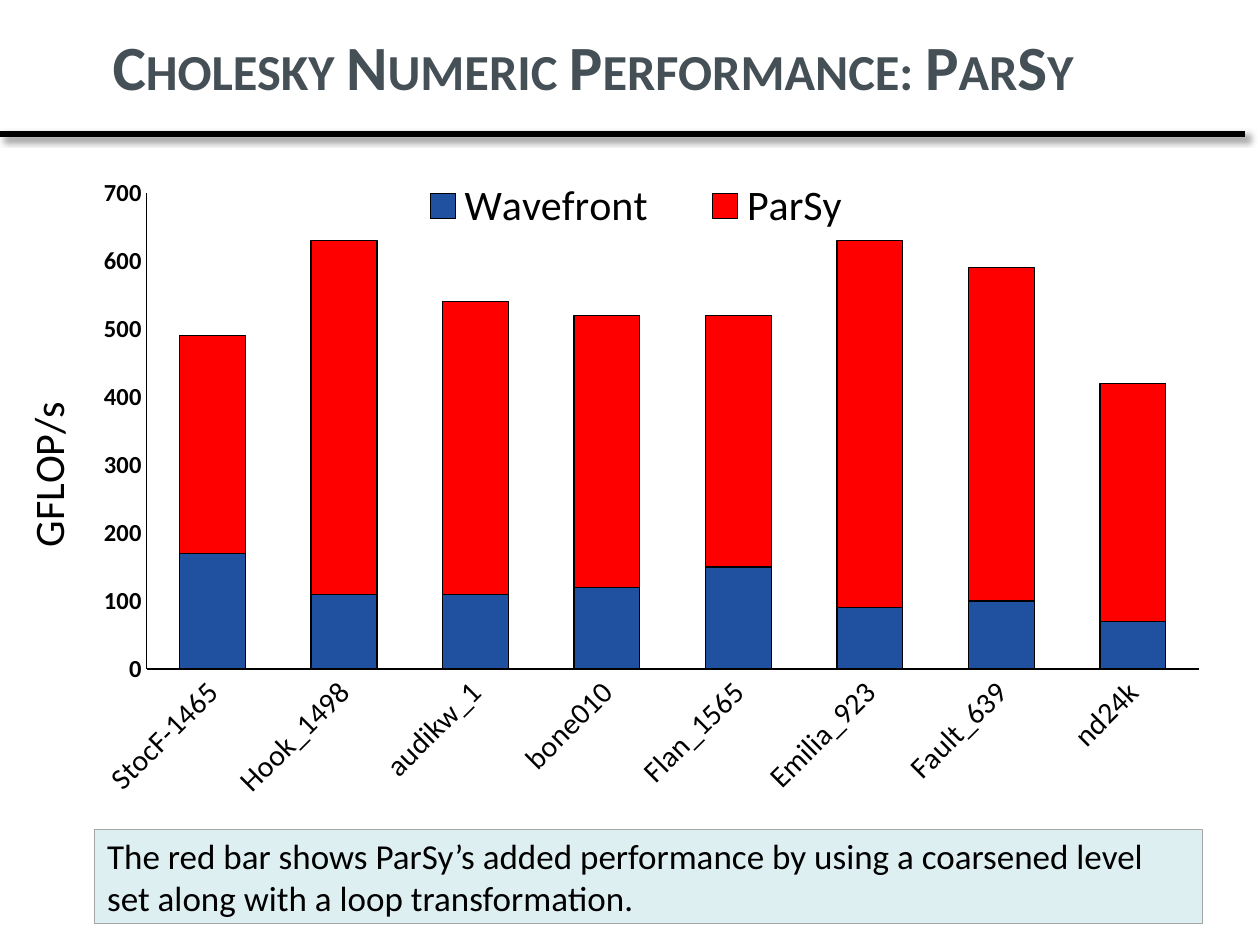
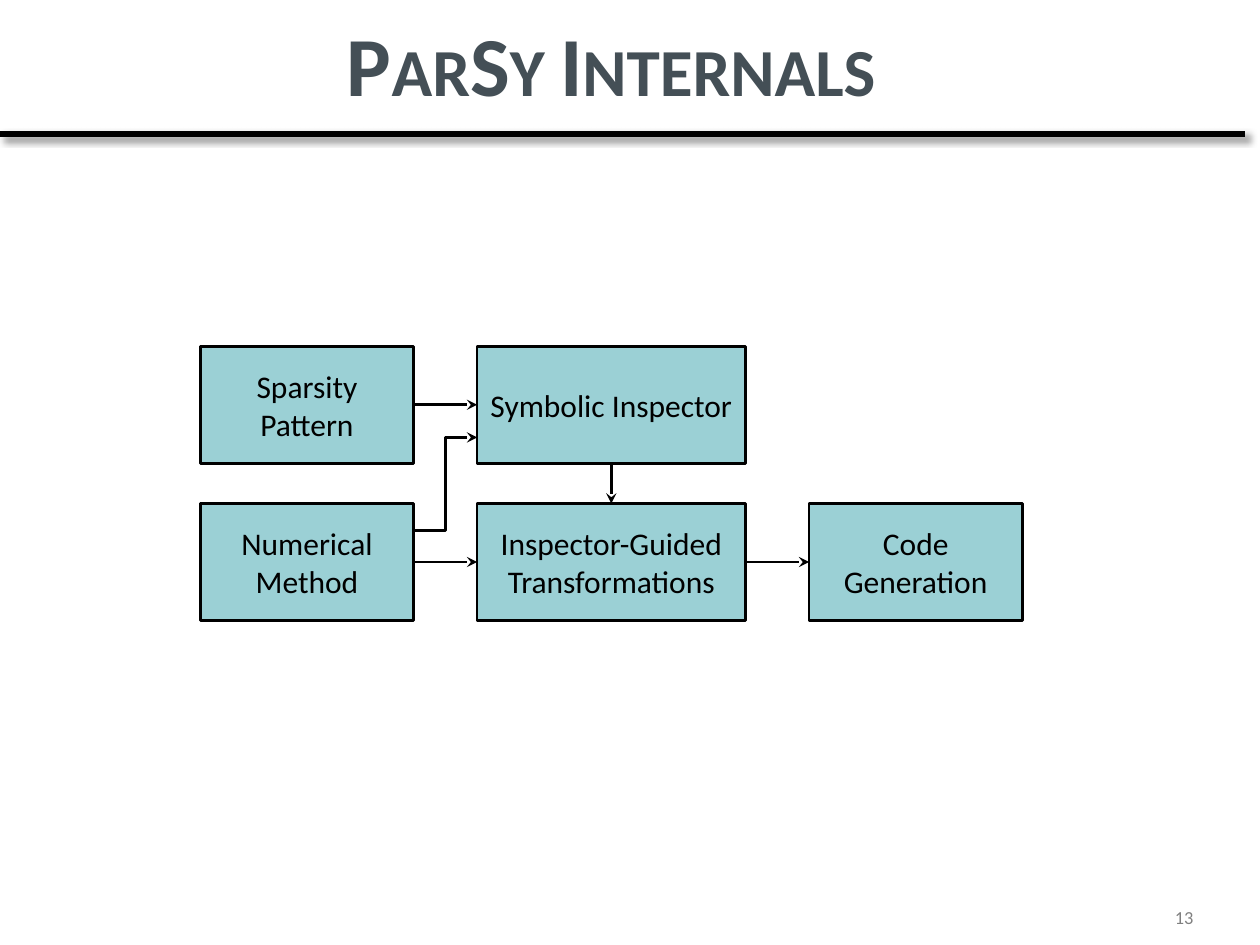
from pptx import Presentation
from pptx.chart.data import CategoryChartData
from pptx.dml.color import RGBColor
from pptx.enum.chart import XL_CHART_TYPE, XL_LEGEND_POSITION, XL_TICK_MARK
from pptx.enum.shapes import MSO_CONNECTOR, MSO_SHAPE
from pptx.enum.text import MSO_ANCHOR, MSO_AUTO_SIZE, PP_ALIGN
from pptx.oxml import parse_xml
from pptx.oxml.ns import nsdecls, qn
from pptx.util import Cm, Pt

COLOURS = {
    "title": "444F56", "ink": "000000", "number": "808080",
    "note": "DEEFF1", "note_edge": "A6A6A6", "stage": "9BD0D5",
    "wavefront": "2051A0", "parsy": "FF0000",
}
FONT = "Calibri"
MATRICES = ["StocF-1465", "Hook_1498", "audikw_1", "bone010",
            "Flan_1565", "Emilia_923", "Fault_639", "nd24k"]
GFLOPS = {
    "Wavefront": ("wavefront", [170, 110, 110, 120, 150, 90, 100, 70]),
    "ParSy": ("parsy", [320, 520, 430, 400, 370, 540, 490, 350]),
}


def colour(name):
    return RGBColor.from_string(COLOURS[name])


def style_font(font, size, name="ink", bold=False):
    font.name = FONT
    font.size = Pt(size)
    font.bold = bold
    font.color.rgb = colour(name)


def style_line(line, width, name="ink"):
    line.width = Pt(width)
    line.color.rgb = colour(name)


def write(frame, text, size, name="ink", align=PP_ALIGN.CENTER, bold=False):
    frame.word_wrap = True
    frame.auto_size = MSO_AUTO_SIZE.NONE
    frame.vertical_anchor = MSO_ANCHOR.MIDDLE
    para = frame.paragraphs[0]
    para.alignment = align
    span = para.add_run()
    span.text = text
    style_font(span.font, size, name, bold)
    return span


def add_box(page, left, top, width, height, fill, edge, edge_width):
    box = page.shapes.add_shape(MSO_SHAPE.RECTANGLE, Cm(left), Cm(top), Cm(width), Cm(height))
    box.shadow.inherit = False
    box.fill.solid()
    box.fill.fore_color.rgb = colour(fill)
    style_line(box.line, edge_width, edge)
    return box


def add_line(page, kind, start, end, width, effect=""):
    line = page.shapes.add_connector(kind, *(Cm(value) for value in (*start, *end)))
    style_line(line.line, width)
    line.element.spPr.append(parse_xml(f'<a:effectLst {nsdecls("a")}>{effect}</a:effectLst>'))
    return line


def add_arrow(page, kind, start, end):
    arrow = add_line(page, kind, start, end, 1.5)
    outline = arrow.element.spPr.find(qn("a:ln"))
    outline.append(parse_xml(f'<a:tailEnd {nsdecls("a")} type="stealth"/>'))
    return arrow


def add_titled_page(deck, title, size, left, top, width):
    page = deck.slides.add_slide(deck.slide_layouts[5])
    heading = page.shapes.title
    heading.left, heading.top, heading.width, heading.height = (
        Cm(left), Cm(top), Cm(width), Cm(2.11))
    span = write(heading.text_frame, title, size, "title", bold=True)
    span.font._element.set("cap", "small")
    shadow = (f'<a:outerShdw blurRad="{Pt(4)}" dist="{Pt(3)}" dir="2700000" algn="tl">'
              f'<a:srgbClr val="{COLOURS["ink"]}"><a:alpha val="40000"/></a:srgbClr>'
              '</a:outerShdw>')
    add_line(page, MSO_CONNECTOR.STRAIGHT, (0, 2.7), (25.09, 2.7), 3, shadow)
    return page


def add_page_number(page, number):
    box = page.shapes.add_textbox(Cm(23.07), Cm(18.21), Cm(1.6), Cm(0.56))
    write(box.text_frame, str(number), 10.5, "number")


def place_after(node, target=None, **position):
    parent = node.getparent()
    for old in parent.findall(qn("c:layout")):
        parent.remove(old)
    modes = "".join(f'<c:{axis}Mode val="edge"/>' for axis in "xy")
    sizes = "".join(f'<c:{key} val="{value}"/>' for key, value in position.items())
    layout_target = f'<c:layoutTarget val="{target}"/>' if target else ""
    node.addnext(parse_xml(f'<c:layout {nsdecls("c")}><c:manualLayout>{layout_target}'
                           f'{modes}{sizes}</c:manualLayout></c:layout>'))


def style_axis(axis, size, bold=False):
    axis.has_major_gridlines = False
    axis.major_tick_mark = axis.minor_tick_mark = XL_TICK_MARK.NONE
    style_font(axis.tick_labels.font, size, bold=bold)
    style_line(axis.format.line, 0.75)


def add_performance_chart(page, left, top, width, height):
    data = CategoryChartData()
    data.categories = MATRICES
    for name, (_, values) in GFLOPS.items():
        data.add_series(name, values)
    chart = page.shapes.add_chart(XL_CHART_TYPE.COLUMN_STACKED, Cm(left), Cm(top),
                                  Cm(width), Cm(height), data).chart
    style_font(chart.font, 10)
    chart.has_title = False

    plot = chart.plots[0]
    plot.gap_width = plot.overlap = 100
    plot.vary_by_categories = False
    for series in plot.series:
        series.format.fill.solid()
        series.format.fill.fore_color.rgb = colour(GFLOPS[series.name][0])
        style_line(series.format.line, 0.75)

    style_axis(chart.category_axis, 17)
    labels = chart.category_axis._element.find(qn("c:txPr")).find(qn("a:bodyPr"))
    labels.set("rot", "-2700000")
    labels.set("vert", "horz")

    scale = chart.value_axis
    style_axis(scale, 14, bold=True)
    scale.minimum_scale, scale.maximum_scale, scale.major_unit = 0, 700, 100
    frame = scale.axis_title.text_frame
    span = frame.paragraphs[0].add_run()
    span.text = "GFLOP/s"
    style_font(span.font, 24)
    frame._txBody.find(qn("a:bodyPr")).set("rot", "-5400000")

    chart.has_legend = True
    chart.legend.position = XL_LEGEND_POSITION.BOTTOM
    chart.legend.include_in_layout = False
    style_font(chart.legend.font, 24)

    area = chart.element.find(qn("c:chart")).find(qn("c:plotArea"))
    if area.find(qn("c:layout")) is None:
        area.insert(0, parse_xml(f'<c:layout {nsdecls("c")}/>'))
    area.replace(area.find(qn("c:layout")), parse_xml(
        f'<c:layout {nsdecls("c")}><c:manualLayout><c:layoutTarget val="inner"/>'
        '<c:xMode val="edge"/><c:yMode val="edge"/><c:x val="0.12"/><c:y val="0.04"/>'
        '<c:w val="0.86"/><c:h val="0.71"/></c:manualLayout></c:layout>'))
    place_after(scale.axis_title._element.find(qn("c:tx")), x=0.01, y=0.34)
    place_after(chart.legend._element.find(qn("c:legendPos")), x=0.31, y=0.02, w=0.42, h=0.08)


def add_note(page, left, top, width, height):
    box = add_box(page, left, top, width, height, "note", "note_edge", 0.75)
    write(box.text_frame, "The red bar shows ParSy’s added performance by using a coarsened "
          "level set along with a loop transformation.", 20, align=PP_ALIGN.LEFT)


def add_pipeline(page, left, top):
    narrow, wide, height, gap, pitch = 4.3, 5.41, 2.36, 1.28, 3.17
    middle = left + narrow + gap
    right = middle + wide + gap
    lower = top + pitch

    def add_stage(text, x, y, width):
        box = add_box(page, x, y, width, height, "stage", "ink", 1.5)
        box.text_frame.margin_left = box.text_frame.margin_right = Cm(0.2)
        write(box.text_frame, text, 18)
        return box

    def join(source, source_side, target, target_side):
        arrow = add_arrow(page, MSO_CONNECTOR.STRAIGHT, (0, 0), (0, 0))
        arrow.begin_connect(source, source_side)
        arrow.end_connect(target, target_side)

    pattern = add_stage("Sparsity Pattern", left, top, narrow)
    method = add_stage("Numerical Method", left, lower, narrow)
    generation = add_stage("Code Generation", right, lower, narrow)
    transformations = add_stage("Inspector-Guided Transformations", middle, lower, wide)
    inspector = add_stage("Symbolic Inspector", middle, top, wide)

    join(method, 3, transformations, 1)
    join(pattern, 3, inspector, 1)
    join(transformations, 3, generation, 1)
    join(inspector, 2, transformations, 0)
    add_arrow(page, MSO_CONNECTOR.ELBOW, (left + narrow, lower + 0.55), (middle, top + 1.84))


def build_performance_page(deck):
    page = add_titled_page(deck, "Cholesky Numeric Performance: ParSy", 36, -0.43, 0.27, 24.77)
    add_note(page, 1.91, 16.72, 22.33, 1.9)
    add_performance_chart(page, 0, 3.35, 24.66, 13.52)


def build_internals_page(deck):
    page = add_titled_page(deck, "ParSy Internals", 48, 0.31, 0.22, 24.03)
    add_pipeline(page, 4.04, 6.98)
    add_page_number(page, 13)


def main():
    deck = Presentation()
    deck.slide_width, deck.slide_height = Cm(25.4), Cm(19.05)
    build_performance_page(deck)
    build_internals_page(deck)
    deck.save("out.pptx")


if __name__ == "__main__":
    main()
